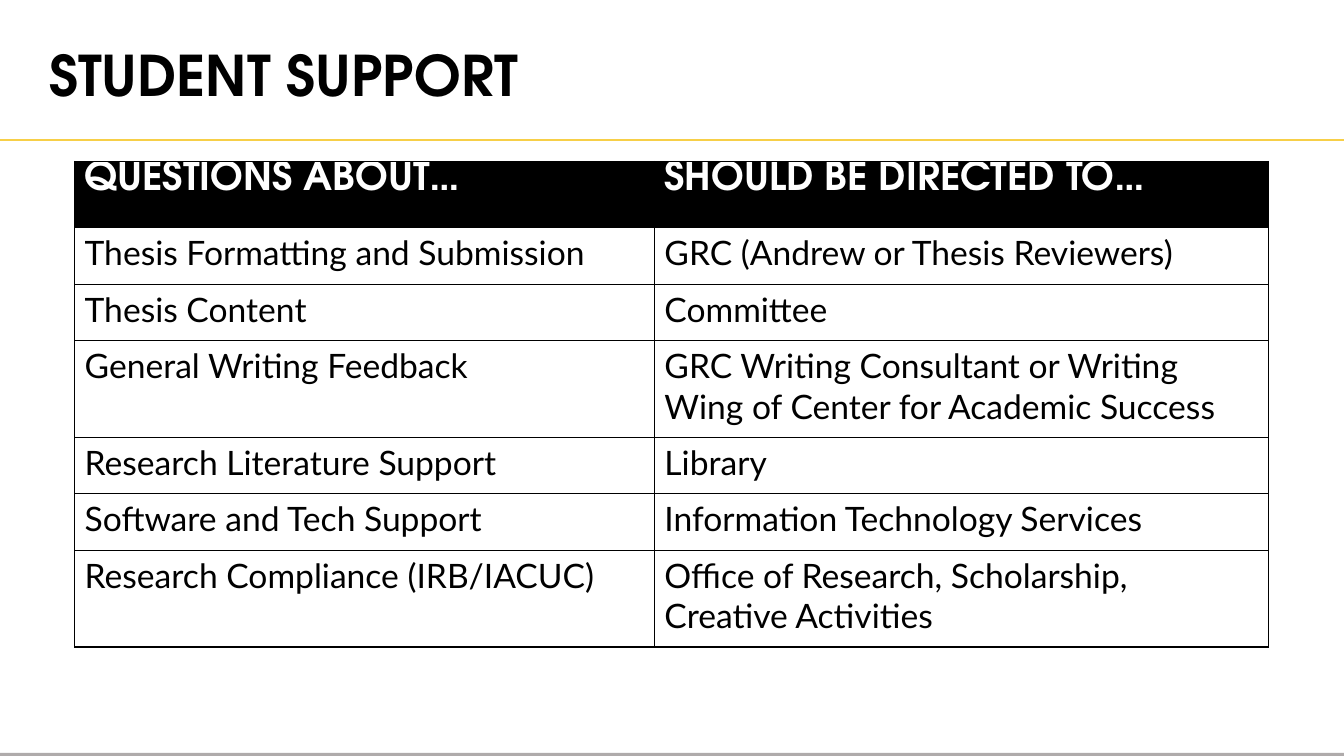
from lxml import etree
from pptx import Presentation
from pptx import util as u
from pptx.dml.color import RGBColor
from pptx.enum import shapes, text
from pptx.oxml.ns import qn

BLACK, WHITE, GOLD, GREY = "000000", "FFFFFF", "F7CF47", "AFABAB"
HEADING_FONT, BODY_FONT = "TeX Gyre Adventor", "Lato"
SLIDE_W, SLIDE_H = 13.33, 7.5

ROWS = [
    ("QUESTIONS ABOUT…", "SHOULD BE DIRECTED TO…"),
    ("Thesis Formatting and Submission", "GRC (Andrew or Thesis Reviewers)"),
    ("Thesis Content", "Committee"),
    ("General Writing Feedback",
     "GRC Writing Consultant or Writing Wing of Center for Academic Success"),
    ("Research Literature Support", "Library"),
    ("Software and Tech Support", "Information Technology Services"),
    ("Research Compliance (IRB/IACUC)",
     "Office of Research, Scholarship, Creative Activities"),
]
COL_WIDTHS = [5.75, 6.09]
ROW_HEIGHTS = [0.66, 0.56, 0.56, 0.96, 0.56, 0.56, 0.96]


def rgb(value):
    return RGBColor.from_string(value)


def inches(*values):
    return [u.Inches(v) for v in values]


class SlideBuilder:
    def __init__(self, prs):
        self.s = prs.slides.add_slide(prs.slide_layouts[5])
        self.s.background.fill.solid()
        self.s.background.fill.fore_color.rgb = rgb(WHITE)

    def style(self, p, font, size, color, bold):
        p.font.name, p.font.size, p.font.bold = font, u.Pt(size), bold
        p.font.color.rgb = rgb(color)

    def title(self, wording, x, y, w, h):
        sp = self.s.shapes.title
        sp.left, sp.top, sp.width, sp.height = inches(x, y, w, h)
        tf = sp.text_frame
        tf.text = wording
        tf.word_wrap = True
        tf.auto_size = text.MSO_AUTO_SIZE.NONE
        tf.vertical_anchor = text.MSO_ANCHOR.MIDDLE
        tf.margin_left = tf.margin_right = u.Inches(0.18)
        tf.margin_top = tf.margin_bottom = u.Inches(0.09)
        p = tf.paragraphs[0]
        p.alignment = text.PP_ALIGN.LEFT
        self.style(p, HEADING_FONT, 40, BLACK, True)

    def bar(self, x, y, w, h, color):
        sp = self.s.shapes.add_shape(shapes.MSO_SHAPE.RECTANGLE, *inches(x, y, w, h))
        sp.shadow.inherit = False
        sp.fill.solid()
        sp.fill.fore_color.rgb = rgb(color)
        sp.line.fill.background()

    def rule(self, x1, y1, x2, y2, color, width):
        line = self.s.shapes.add_connector(
            shapes.MSO_CONNECTOR.STRAIGHT, *inches(x1, y1, x2, y2))
        line.line.color.rgb = rgb(color)
        line.line.width = u.Pt(width)
        etree.SubElement(line._element.spPr, qn("a:effectLst"))

    def borders(self, cell, widths):
        """Draw black cell borders; widths maps L, R, T and B to points."""
        tcPr = cell._tc.get_or_add_tcPr()
        for i, side in enumerate("LRTB"):
            ln = etree.Element(qn(f"a:ln{side}"), w=str(u.Pt(widths[side])))
            fill = etree.SubElement(ln, qn("a:solidFill"))
            etree.SubElement(fill, qn("a:srgbClr"), val=BLACK)
            tcPr.insert(i, ln)

    def table(self, rows, x, y, col_widths, row_heights):
        table = self.s.shapes.add_table(
            len(rows), len(col_widths),
            *inches(x, y, sum(col_widths), sum(row_heights))).table
        for col, width in zip(table.columns, col_widths):
            col.width = u.Inches(width)
        for r, (row, height) in enumerate(zip(rows, row_heights)):
            table.rows[r].height = u.Inches(height)
            for c, wording in enumerate(row):
                self.cell(table.cell(r, c), wording, r == 0, c)

    def cell(self, cell, wording, header, col):
        cell.text = wording
        cell.fill.solid()
        cell.fill.fore_color.rgb = rgb(BLACK if header else WHITE)
        p = cell.text_frame.paragraphs[0]
        widths = dict.fromkeys("LRTB", 1)
        if header:
            cell.margin_top = cell.margin_bottom = 0
            self.style(p, HEADING_FONT, 28, WHITE, True)
            widths.update({"T": 0.5, "LR"[col]: 0.5})
        else:
            self.style(p, BODY_FONT, 24, BLACK, False)
        self.borders(cell, widths)


def main():
    prs = Presentation()
    prs.slide_width, prs.slide_height = inches(SLIDE_W, SLIDE_H)
    slide = SlideBuilder(prs)
    slide.title("STUDENT SUPPORT", 0.31, 0.09, 10.06, 1.3)
    slide.bar(0, 7.47, SLIDE_W, 0.06, GREY)
    slide.rule(0, 1.39, SLIDE_W, 1.39, GOLD, 1.5)
    slide.table(ROWS, 0.74, 1.6, COL_WIDTHS, ROW_HEIGHTS)
    prs.save("out.pptx")


if __name__ == "__main__":
    main()
